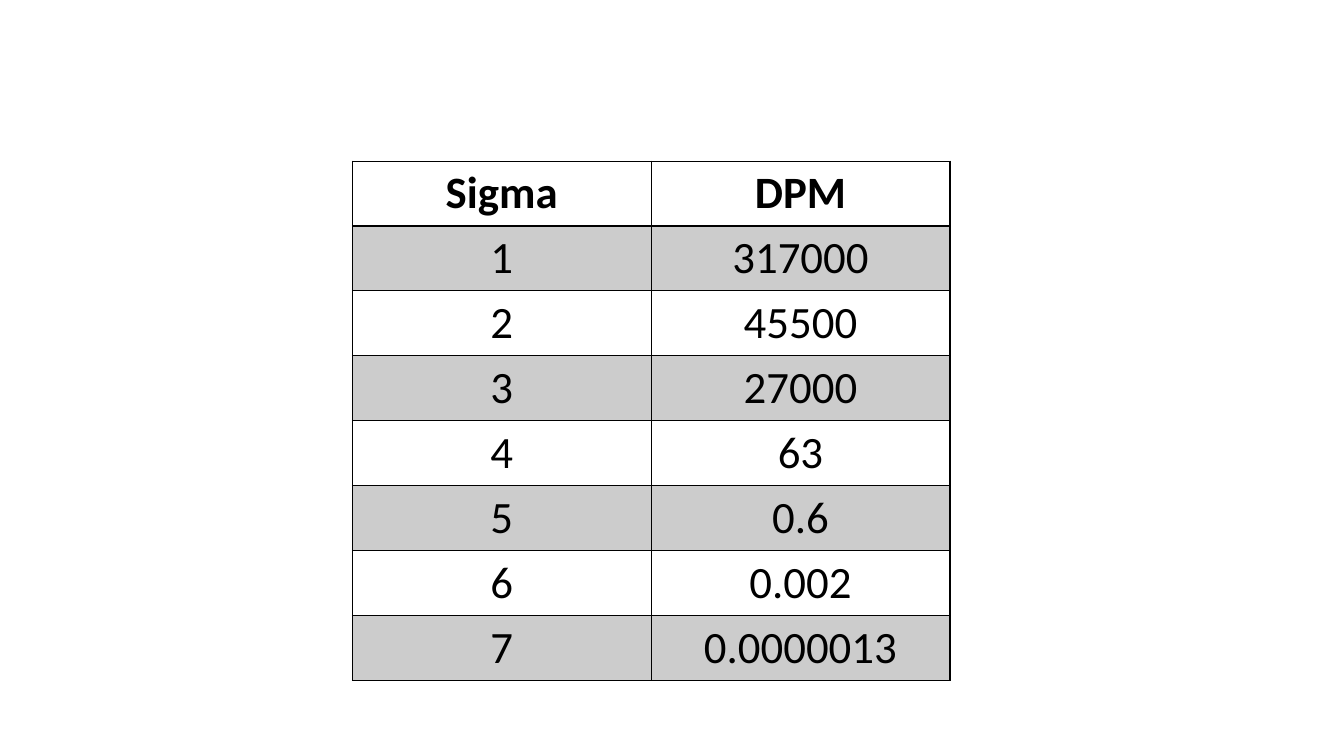
from lxml.etree import SubElement
from pptx import Presentation
from pptx.dml.color import RGBColor
from pptx.enum.text import MSO_ANCHOR, PP_ALIGN
from pptx.oxml.ns import qn
from pptx.util import Cm, Pt

ROWS = [
    ("Sigma", "DPM"),
    ("1", "317000"),
    ("2", "45500"),
    ("3", "27000"),
    ("4", "63"),
    ("5", "0.6"),
    ("6", "0.002"),
    ("7", "0.0000013"),
]


def rgb(value):
    return RGBColor.from_string(value)


class SlideBuilder:
    """Holds the table style and the current slide."""

    font = "Calibri"
    size = 32
    ink = "000000"
    band_opacity = 20

    def __init__(self, slide):
        self.slide = slide

    def borders(self, cell, bottom):
        properties = cell._tc.get_or_add_tcPr()
        for side, width in (("L", 1), ("R", 1), ("T", 1), ("B", bottom)):
            line = SubElement(properties, qn(f"a:ln{side}"), w=str(Pt(width)))
            fill = SubElement(line, qn("a:solidFill"))
            SubElement(fill, qn("a:srgbClr"), val=self.ink)

    def band(self, cell):
        cell.fill.solid()
        cell.fill.fore_color.rgb = rgb(self.ink)
        color = cell._tc.tcPr.find(f"{qn('a:solidFill')}/{qn('a:srgbClr')}")
        SubElement(color, qn("a:alpha"), val=str(self.band_opacity * 1000))

    def text(self, cell, value, bold):
        cell.text_frame.text = value
        cell.vertical_anchor = MSO_ANCHOR.TOP
        paragraph = cell.text_frame.paragraphs[0]
        paragraph.alignment = PP_ALIGN.CENTER
        font = paragraph.runs[0].font
        font.name, font.size, font.bold = self.font, Pt(self.size), bold
        font.color.rgb = rgb(self.ink)

    def table(self, rows, left, top, column_width, row_height):
        columns = len(rows[0])
        table = self.slide.shapes.add_table(
            len(rows), columns, Cm(left), Cm(top),
            Cm(column_width * columns), Cm(row_height * len(rows)),
        ).table
        for row_index, values in enumerate(rows):
            header = row_index == 0
            for column_index, value in enumerate(values):
                cell = table.cell(row_index, column_index)
                self.text(cell, value, header)
                self.borders(cell, bottom=2 if header else 1)
                if row_index % 2:
                    self.band(cell)
                else:
                    cell.fill.background()


def main():
    presentation = Presentation()
    presentation.slide_width = Cm(33.87)
    presentation.slide_height = Cm(19.05)
    slide = presentation.slides.add_slide(presentation.slide_layouts[6])
    SlideBuilder(slide).table(ROWS, left=8.88, top=4.06, column_width=7.53, row_height=1.61)
    presentation.save("out.pptx")


if __name__ == "__main__":
    main()
